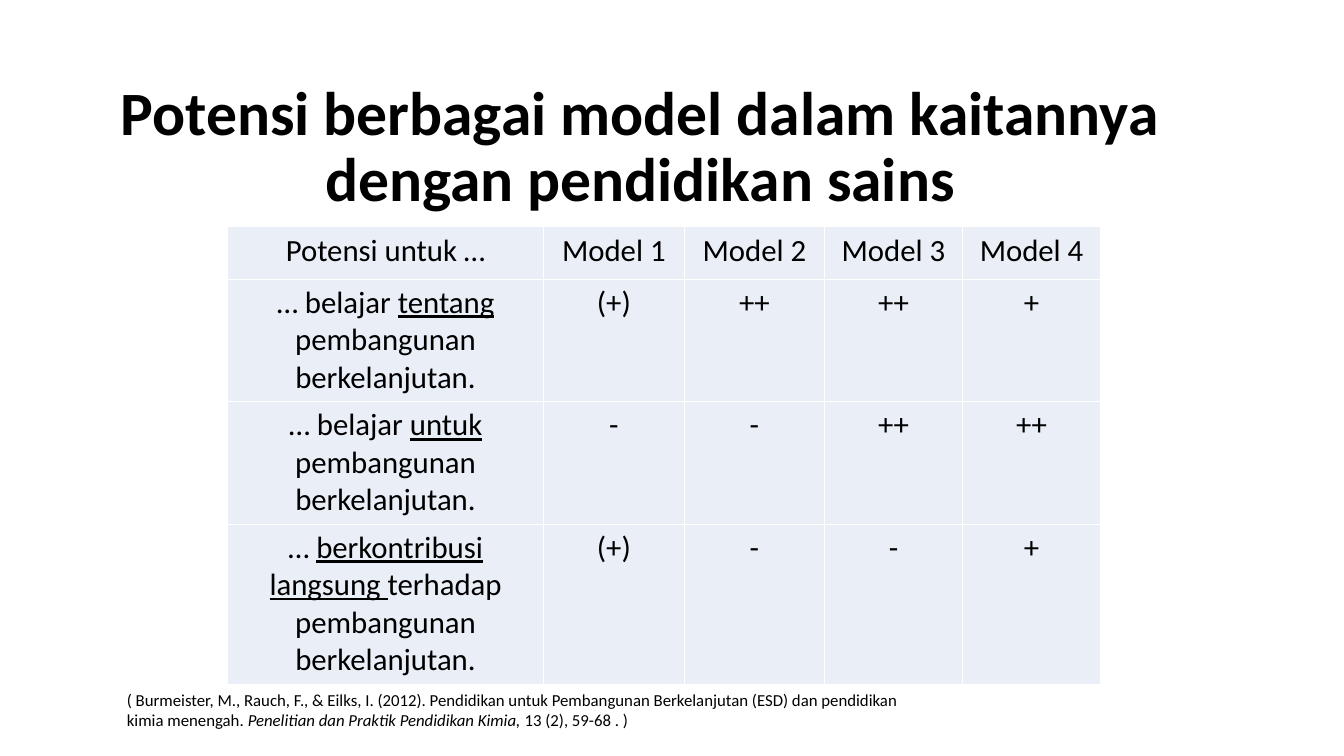
from lxml import etree
from pptx import Presentation
from pptx.dml.color import RGBColor
from pptx.enum import text
from pptx.oxml import ns
from pptx.util import Pt

BLACK = RGBColor(0x00, 0x00, 0x00)
WHITE = RGBColor(0xFF, 0xFF, 0xFF)
PALE_BLUE = RGBColor(0xEA, 0xEF, 0xF7)
FONT = "Calibri"

# Content: each text is a list of (words, style) runs
PLAIN, BOLD, ITALIC, UNDERLINE = None, "bold", "italic", "underline"
HEADING = [("Potensi berbagai model dalam kaitannya dengan pendidikan sains", BOLD)]
GOAL = "pembangunan berkelanjutan."
POTENTIALS = [
    ([("Potensi untuk …", PLAIN)], ["Model 1", "Model 2", "Model 3", "Model 4"]),
    ([("… belajar ", PLAIN), ("tentang ", UNDERLINE), (GOAL, PLAIN)],
     ["(+)", "++", "++", "+"]),
    ([("… belajar ", PLAIN), ("untuk ", UNDERLINE), (GOAL, PLAIN)],
     ["-", "-", "++", "++"]),
    ([("… ", PLAIN), ("berkontribusi langsung ", UNDERLINE), ("terhadap " + GOAL, PLAIN)],
     ["(+)", "-", "-", "+"]),
]
CITATION = [
    ("( Burmeister, M., Rauch, F., & Eilks, I. (2012). Pendidikan untuk Pembangunan "
     "Berkelanjutan (ESD) dan pendidikan kimia menengah. ", PLAIN),
    ("Penelitian dan Praktik Pendidikan Kimia, ", ITALIC),
    ("13 (2), 59-68 . )", PLAIN),
]

# Layout in points: left, top, width, height
HEADING_BOX = (17.3, 61.2, 880.6, 90)
TABLE_BOX = (162.7, 162, 623.5, 323.3)
CITATION_BOX = (83.5, 488.9, 575.3, 36)
COLUMN_WIDTHS = [225.4, 100.8, 100, 98.65, 98.65]
ROW_HEIGHTS = [37.4, 69.1, 69.1, 69.1]


def points(box):
    return [Pt(length) for length in box]


def write(paragraph, runs, size, align):
    paragraph.alignment = align
    for words, style in runs:
        run = paragraph.add_run()
        run.text = words
        run.font.name = FONT
        run.font.size = Pt(size)
        run.font.color.rgb = BLACK
        if style:
            setattr(run.font, style, True)


def add_borders(cell):
    properties = cell._tc.get_or_add_tcPr()
    for index, side in enumerate(("lnL", "lnR", "lnT", "lnB")):
        line = etree.Element(ns.qn("a:" + side), w=str(Pt(0.96)))
        fill = etree.SubElement(line, ns.qn("a:solidFill"))
        etree.SubElement(fill, ns.qn("a:srgbClr"), val=str(WHITE))
        properties.insert(index, line)


deck = Presentation()
deck.slide_width, deck.slide_height = Pt(960), Pt(540)
slide = deck.slides.add_slide(deck.slide_layouts[5])

# Heading
heading = slide.shapes.title
heading.left, heading.top, heading.width, heading.height = points(HEADING_BOX)
heading_frame = heading.text_frame
heading_frame.word_wrap = True
heading_frame.auto_size = text.MSO_AUTO_SIZE.NONE
heading_frame.vertical_anchor = text.MSO_ANCHOR.MIDDLE
heading_frame.paragraphs[0].line_spacing = 0.9
write(heading_frame.paragraphs[0], HEADING, 44, text.PP_ALIGN.CENTER)

# Table of potentials
potentials_holder = slide.shapes.add_table(
    len(POTENTIALS), len(COLUMN_WIDTHS), *points(TABLE_BOX))
potentials = potentials_holder.table
for column, width in zip(potentials.columns, COLUMN_WIDTHS):
    column.width = Pt(width)
for row, height, (potential, ratings) in zip(potentials.rows, ROW_HEIGHTS, POTENTIALS):
    row.height = Pt(height)
    entries = [potential] + [[(rating, PLAIN)] for rating in ratings]
    for cell, runs in zip(row.cells, entries):
        cell.margin_left = cell.margin_right = Pt(1.4)
        cell.margin_top = cell.margin_bottom = Pt(3.6)
        cell.fill.solid()
        cell.fill.fore_color.rgb = PALE_BLUE
        add_borders(cell)
        write(cell.text_frame.paragraphs[0], runs, 22, text.PP_ALIGN.CENTER)
potentials.first_row = potentials.horz_banding = False
potentials_holder.height = Pt(TABLE_BOX[3])

# Citation
citation_frame = slide.shapes.add_textbox(*points(CITATION_BOX)).text_frame
citation_frame.word_wrap = True
citation_frame.auto_size = text.MSO_AUTO_SIZE.SHAPE_TO_FIT_TEXT
write(citation_frame.paragraphs[0], CITATION, 12, text.PP_ALIGN.LEFT)

deck.save("out.pptx")
